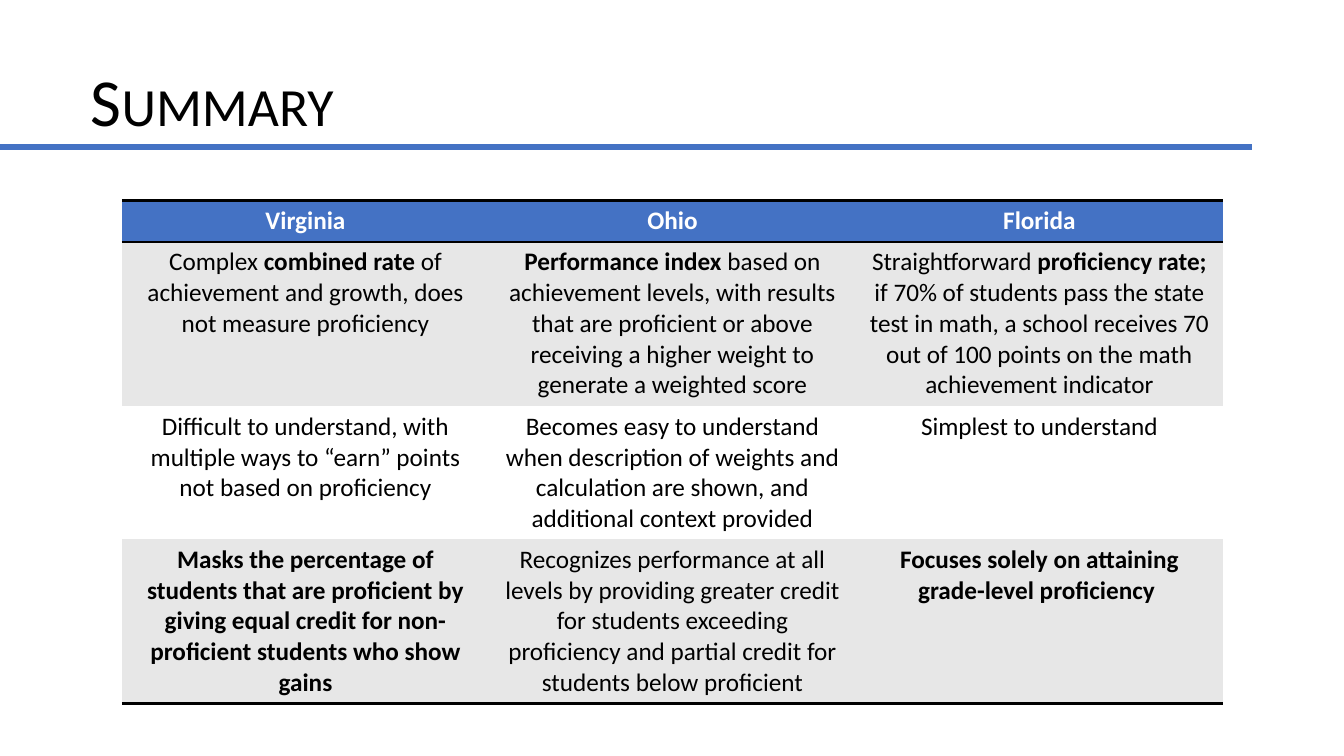
from dataclasses import dataclass

from lxml import etree
from pptx import Presentation
from pptx import util as u
from pptx.dml.color import RGBColor
from pptx.enum import shapes, text
from pptx.oxml import ns


@dataclass(frozen=True)
class Theme:
    font: str = "Calibri"
    blue: str = "4472C4"
    gray: str = "E7E7E7"
    white: str = "FFFFFF"
    black: str = "000000"
    title: int = 48
    body: int = 18
    rule: float = 4.5
    edge: float = 2


T = Theme()
NO_GRID = "{2D5ABB26-0587-4C30-8999-92F81FD0307C}"
WIDTH = 3.64
HEIGHTS = [0.41, 1.63, 1.32, 1.63]
# Words between ** marks are bold.
ROWS = [
    ["**Virginia**", "**Ohio**", "**Florida**"],
    [
        "Complex **combined rate **of achievement and growth, does not measure proficiency",
        "**Performance index **based on achievement levels, with results that are "
        "proficient or above receiving a higher weight to generate a weighted score",
        "Straightforward **proficiency rate; **if 70% of students pass the state test "
        "in math, a school receives 70 out of 100 points on the math achievement indicator",
    ],
    [
        "Difficult to understand, with multiple ways to “earn” points not based on proficiency",
        "Becomes easy to understand when description of weights and calculation are "
        "shown, and additional context provided",
        "Simplest to understand",
    ],
    [
        "**Masks the percentage of students that are proficient by giving equal credit "
        "for non-proficient students who show gains**",
        "Recognizes performance at all levels by providing greater credit for students "
        "exceeding proficiency and partial credit for students below proficient",
        "**Focuses solely on attaining grade-level proficiency **",
    ],
]


def write(frame, words, size=T.body, color=T.black, align=None, space=None, caps=False):
    """Fill a text frame, setting every part between ** marks in bold."""
    para = frame.paragraphs[0]
    para.alignment = align
    para.line_spacing = space
    for i, part in enumerate(words.split("**")):
        if not part:
            continue
        run = para.add_run()
        run.text = part
        run.font.name = T.font
        run.font.size = u.Pt(size)
        run.font.bold = i % 2 == 1
        run.font.color.rgb = RGBColor.from_string(color)
        if caps:
            run.font._element.set("cap", "small")


def add_title(slide, words):
    box = slide.shapes.add_textbox(0, 0, u.Inches(13.33), u.Inches(1.45))
    frame = box.text_frame
    frame.word_wrap = True
    frame.vertical_anchor = text.MSO_ANCHOR.BOTTOM
    frame.margin_left = u.Inches(0.9)
    write(frame, words, size=T.title, space=0.9, caps=True)


def add_rule(slide, left, right, top):
    line = slide.shapes.add_connector(
        shapes.MSO_CONNECTOR.STRAIGHT,
        u.Inches(left), u.Inches(top), u.Inches(right), u.Inches(top),
    )
    line.line.color.rgb = RGBColor.from_string(T.blue)
    line.line.width = u.Pt(T.rule)
    etree.SubElement(line._element.spPr, ns.qn("a:effectLst"))


def add_edge(cell, side):
    """Draw the top (T) or bottom (B) border of a cell."""
    props = cell._tc.get_or_add_tcPr()
    edge = etree.SubElement(props, ns.qn("a:ln" + side), w=str(u.Pt(T.edge)))
    fill = etree.SubElement(edge, ns.qn("a:solidFill"))
    etree.SubElement(fill, ns.qn("a:srgbClr"), val=T.black)


def add_grid(slide, left, top):
    table = slide.shapes.add_table(
        len(ROWS), len(ROWS[0]), u.Inches(left), u.Inches(top),
        u.Inches(WIDTH * len(ROWS[0])), u.Inches(sum(HEIGHTS)),
    ).table
    table.first_row = table.horz_banding = False
    table._tbl.tblPr.find(ns.qn("a:tableStyleId")).text = NO_GRID
    for col in table.columns:
        col.width = u.Inches(WIDTH)
    for r, row in enumerate(ROWS):
        table.rows[r].height = u.Inches(HEIGHTS[r])
        sides = "TB" if r == 0 else "B" if r == len(ROWS) - 1 else ""
        shade = T.blue if r == 0 else T.gray if r % 2 else T.white
        for c, words in enumerate(row):
            cell = table.cell(r, c)
            for side in sides:
                add_edge(cell, side)
            cell.fill.solid()
            cell.fill.fore_color.rgb = RGBColor.from_string(shade)
            write(cell.text_frame, words, color=T.black if r else T.white,
                  align=text.PP_ALIGN.CENTER)


def main():
    deck = Presentation()
    deck.slide_width = u.Inches(13.33)
    deck.slide_height = u.Inches(7.5)
    slide = deck.slides.add_slide(deck.slide_layouts[6])
    add_title(slide, "Summary")
    add_rule(slide, -0.02, 12.42, 1.46)
    add_grid(slide, 1.21, 1.99)
    deck.save("out.pptx")


if __name__ == "__main__":
    main()
